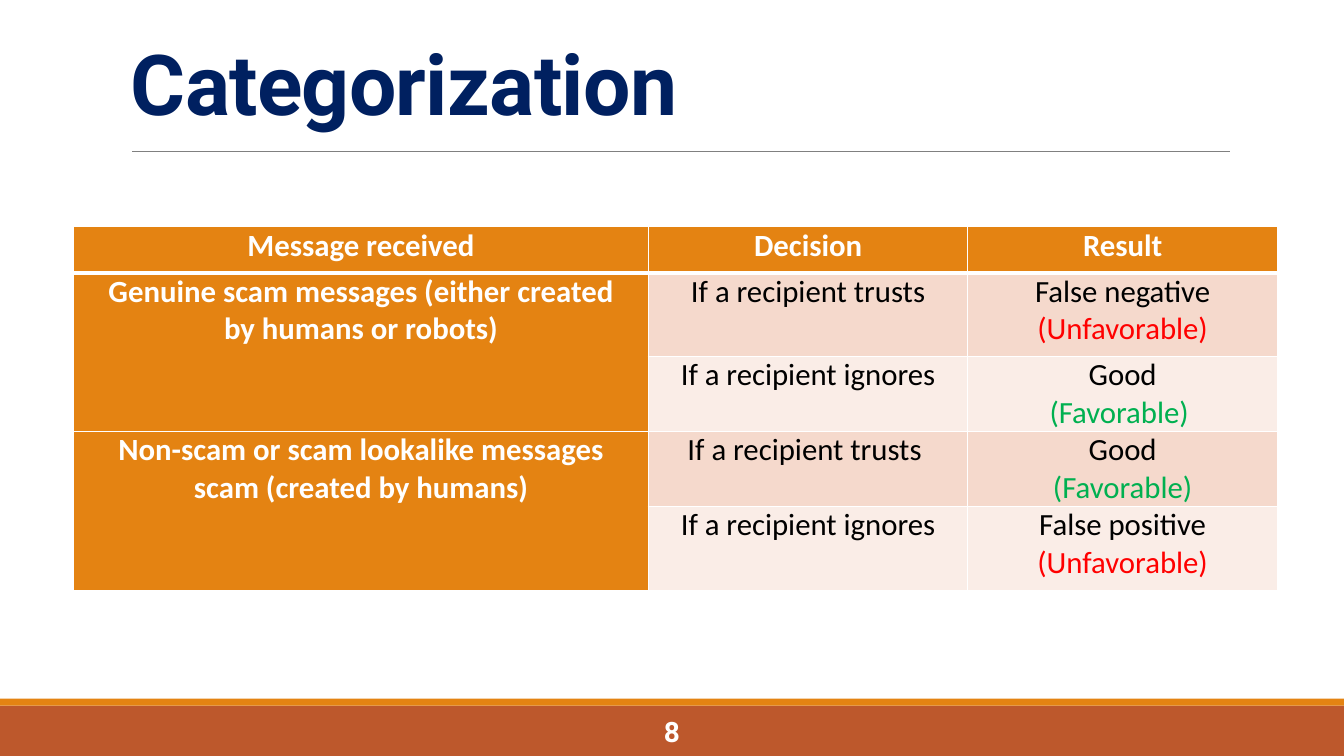
from dataclasses import dataclass

from lxml.etree import SubElement
from pptx import Presentation
from pptx.dml.color import RGBColor
from pptx.enum.shapes import MSO_CONNECTOR, MSO_SHAPE
from pptx.enum.text import MSO_ANCHOR, PP_ALIGN
from pptx.oxml import parse_xml
from pptx.oxml.ns import nsdecls, qn
from pptx.util import Inches, Pt


@dataclass(frozen=True)
class Theme:
    white: str = "FFFFFF"
    black: str = "000000"
    navy: str = "002060"
    rust: str = "BD582C"
    orange: str = "E48312"
    rule: str = "808080"
    band_dark: str = "F5D9CC"
    band_light: str = "FAEDE7"
    good: str = "00B050"
    bad: str = "FF0000"
    heading_font: str = "Roboto"
    body_font: str = "Calibri"
    title_size: float = 60
    body_size: float = 22
    number_size: float = 20
    thin: float = 1
    thick: float = 3
    hairline: float = 0.5


class SlideBuilder:
    def __init__(self, presentation, theme):
        self.theme = theme
        self.width = presentation.slide_width
        self.height = presentation.slide_height
        self.slide = presentation.slides.add_slide(presentation.slide_layouts[6])

    def across(self, percent):
        return round(self.width * percent / 100)

    def down(self, percent):
        return round(self.height * percent / 100)

    def place(self, left, top, width, height):
        return self.across(left), self.down(top), self.across(width), self.down(height)

    def bar(self, area, color):
        shape = self.slide.shapes.add_shape(MSO_SHAPE.RECTANGLE, *self.place(*area))
        shape.shadow.inherit = False
        shape.fill.solid()
        shape.fill.fore_color.rgb = RGBColor.from_string(color)
        shape.line.fill.background()

    def rule(self, left, right, top):
        connector = self.slide.shapes.add_connector(
            MSO_CONNECTOR.STRAIGHT,
            self.across(left), self.down(top), self.across(right), self.down(top),
        )
        connector.line.color.rgb = RGBColor.from_string(self.theme.rule)
        connector.line.width = Pt(self.theme.hairline)
        SubElement(connector._element.spPr, qn("a:effectLst"))

    def run(self, paragraph, text, color, formats):
        run = paragraph.add_run()
        run.text = text
        for name, value in formats.items():
            setattr(run.font, name, value)
        run.font.color.rgb = RGBColor.from_string(color)
        return run

    def text(self, area, content, color, size, anchor, paragraph_formats, spacing=0):
        frame = self.slide.shapes.add_textbox(*self.place(*area)).text_frame
        frame.word_wrap = True
        frame.vertical_anchor = anchor
        paragraph = frame.paragraphs[0]
        for name, value in paragraph_formats.items():
            setattr(paragraph, name, value)
        formats = {"name": self.theme.heading_font, "size": Pt(size), "bold": True}
        run = self.run(paragraph, content, color, formats)
        if spacing:
            run.font._element.set("spc", str(round(spacing * 100)))

    def borders(self, cell, top, bottom):
        widths = {"L": self.theme.thin, "R": self.theme.thin, "T": top, "B": bottom}
        for index, (side, width) in enumerate(widths.items()):
            border = parse_xml(
                f'<a:ln{side} {nsdecls("a")} w="{Pt(width)}"><a:solidFill>'
                f'<a:srgbClr val="{self.theme.white}"/></a:solidFill></a:ln{side}>'
            )
            cell._tc.get_or_add_tcPr().insert(index, border)

    def cell(self, cell, paragraphs, fill, bold):
        margins = {"margin_left": 0.17, "margin_right": 0.17, "margin_top": 0, "margin_bottom": 0}
        for name, value in margins.items():
            setattr(cell, name, Inches(value))
        cell.fill.solid()
        cell.fill.fore_color.rgb = RGBColor.from_string(fill)
        formats = {"name": self.theme.body_font, "size": Pt(self.theme.body_size), "bold": bold}
        frame = cell.text_frame
        for index, runs in enumerate(paragraphs):
            paragraph = frame.add_paragraph() if index else frame.paragraphs[0]
            paragraph.alignment = PP_ALIGN.CENTER
            for text, color in runs:
                self.run(paragraph, text, color, formats)

    def table(self, area, column_shares, row_shares, rows, group_size):
        theme = self.theme
        frame = self.slide.shapes.add_table(len(rows), len(column_shares), *self.place(*area))
        table = frame.table
        for name in ("first_row", "horz_banding"):
            setattr(table, name, False)
        for column, share in zip(table.columns, column_shares):
            column.width = self.across(share)
        for row, share in zip(table.rows, row_shares):
            row.height = self.down(share)
        for row_index, row in enumerate(rows):
            band = theme.band_dark if row_index % 2 else theme.band_light
            top = theme.thick if row_index == 1 else theme.thin
            bottom = theme.thick if row_index == 0 else theme.thin
            for column_index, paragraphs in enumerate(row):
                strong = row_index == 0 or column_index == 0
                cell = table.cell(row_index, column_index)
                self.cell(cell, paragraphs, theme.orange if strong else band, strong)
                self.borders(cell, top, bottom)
        for first in range(1, len(rows), group_size):
            table.cell(first, 0).merge(table.cell(first + group_size - 1, 0))


def main():
    theme = Theme()
    presentation = Presentation()
    presentation.slide_width = Inches(13.33)
    presentation.slide_height = Inches(7.5)
    builder = SlideBuilder(presentation, theme)

    builder.bar((0, 93.33, 100, 6.67), theme.rust)
    builder.bar((0, 92.4, 100, 0.93), theme.orange)
    builder.rule(9.83, 91.52, 20)
    builder.text((9, 4.13, 82.52, 14.13), "Categorization", theme.navy, theme.title_size,
                 MSO_ANCHOR.BOTTOM, {"line_spacing": 0.85}, -0.5)
    builder.text((30.23, 94.13, 39.53, 5.33), "8", theme.white, theme.number_size,
                 MSO_ANCHOR.MIDDLE, {"alignment": PP_ALIGN.CENTER})

    def strong(text):
        return [[(text, theme.white)]]

    def plain(text):
        return [[(text, theme.black)]]

    def mistake(text):
        return [[(text, theme.black), ("(Unfavorable)", theme.bad)]]

    def success(verdict):
        return [[("Good", theme.black)], [(verdict, theme.good)]]

    genuine = "Genuine scam messages (either created by humans or robots)"
    lookalike = "Non-scam or scam lookalike messages scam (created by humans)"
    rows = [
        [strong("Message received"), strong("Decision"), strong("Result")],
        [strong(genuine), plain("If a recipient trusts"), mistake("False negative ")],
        [[], plain("If a recipient ignores"), success("(Favorable) ")],
        [strong(lookalike), plain("If a recipient trusts "), success("(Favorable)")],
        [[], plain("If a recipient ignores"), mistake("False positive ")],
    ]
    builder.table((5.48, 30, 89.57, 48), (42.76, 23.78, 23.03),
                  (6.1, 11.07, 9.93, 9.93, 11.07), rows, 2)
    presentation.save("out.pptx")


if __name__ == "__main__":
    main()
